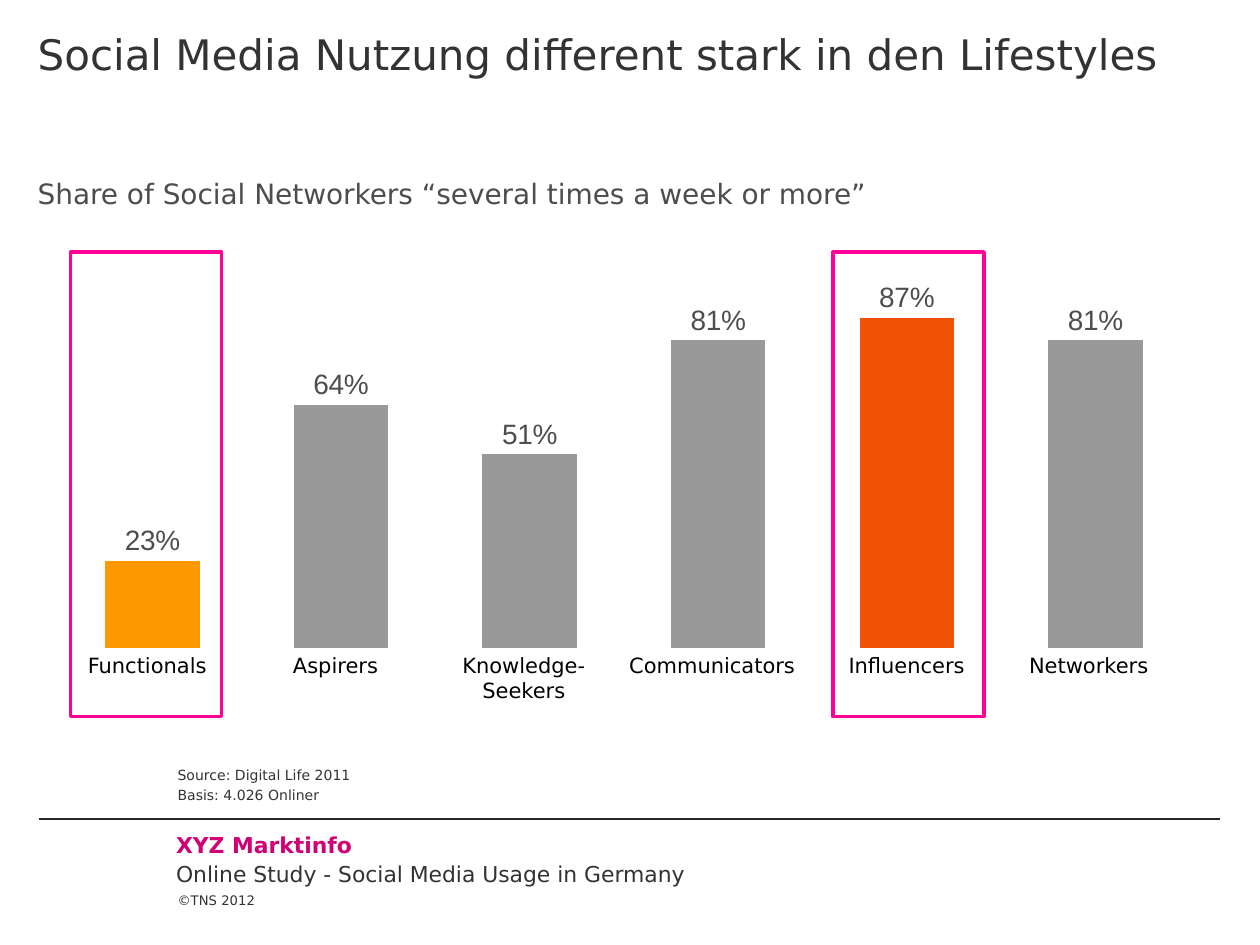
"""Builds a slide on social media usage by lifestyle group."""
import pptx
import pptx.chart.data
import pptx.dml.color
import pptx.enum.chart
import pptx.enum.shapes
import pptx.enum.text
import pptx.oxml
import pptx.oxml.ns
import pptx.util
from pptx.util import Cm, Pt

COLORS = {
    "text": "333333", "label": "4D4D4D", "black": "000000", "rule": "262626",
    "brand": "D10074", "frame": "FF0099", "bar": "999999",
    "low": "FF9900", "high": "EF5205",
}
FONT = "DejaVu Sans"
SHARES = {
    "Functionals": 23, "Aspirers": 64, "Knowledge-Seekers": 51,
    "Communicators": 81, "Influencers": 87, "Networkers": 81,
}
LAYOUT_XML = (
    '<c:layout %s><c:manualLayout><c:layoutTarget val="inner"/>'
    '<c:xMode val="edge"/><c:yMode val="edge"/><c:x val="0.026"/><c:y val="0.172"/>'
    '<c:w val="0.97"/><c:h val="0.8"/></c:manualLayout></c:layout>'
    % pptx.oxml.ns.nsdecls("c")
)


def rgb(name):
    return pptx.dml.color.RGBColor.from_string(COLORS[name])


def lengths(values):
    return [Cm(v) for v in values]


class SlideBuilder:
    def __init__(self, prs):
        self.slide = prs.slides.add_slide(prs.slide_layouts[5])
        self.shapes = self.slide.shapes

    def run(self, p, text, size, color, bold=False):
        r = p.add_run()
        r.text = text
        r.font.name = FONT
        r.font.size = Pt(size)
        r.font.bold = bold
        r.font.color.rgb = rgb(color)

    def fill_text(self, tf, lines, size, color, insets, bottom=False, bold=False):
        anchor = pptx.enum.text.MSO_ANCHOR
        tf.word_wrap = True
        tf.auto_size = pptx.enum.text.MSO_AUTO_SIZE.NONE
        tf.vertical_anchor = anchor.BOTTOM if bottom else anchor.TOP
        tf.margin_left, tf.margin_top, tf.margin_right, tf.margin_bottom = lengths(insets)
        for i, line in enumerate(lines):
            p = tf.add_paragraph() if i else tf.paragraphs[0]
            p.alignment = pptx.enum.text.PP_ALIGN.LEFT
            if i:
                p.space_before = Pt(0.2 * size)
            self.run(p, line, size, color, bold)

    def title(self, text, box):
        sp = self.shapes.title
        sp.left, sp.top, sp.width, sp.height = lengths(box)
        self.fill_text(sp.text_frame, [text], 24, "text", (0.76, 0.58, 0.76, 0))

    def text(self, lines, box, size, color, insets, **style):
        sp = self.shapes.add_textbox(*lengths(box))
        self.fill_text(sp.text_frame, lines, size, color, insets, **style)

    def rule(self, x1, x2, y):
        sp = self.shapes.add_connector(
            pptx.enum.shapes.MSO_CONNECTOR.STRAIGHT, *lengths((x1, y, x2, y)))
        sp.line.color.rgb = rgb("rule")
        sp.line.width = Pt(0.75)
        sp._element.spPr.append(pptx.oxml.parse_xml(
            "<a:effectLst %s/>" % pptx.oxml.ns.nsdecls("a")))

    def frame(self, box):
        sp = self.shapes.add_shape(pptx.enum.shapes.MSO_SHAPE.RECTANGLE, *lengths(box))
        sp.shadow.inherit = False
        sp.fill.background()
        sp.line.color.rgb = rgb("frame")
        sp.line.width = Pt(2)

    def chart(self, values, highlights, box):
        data = pptx.chart.data.CategoryChartData()
        data.categories = [str(i + 1) for i in range(len(values))]
        data.add_series("Series 1", values)
        chart = self.shapes.add_chart(
            pptx.enum.chart.XL_CHART_TYPE.COLUMN_CLUSTERED, *lengths(box), data).chart
        chart.has_title = False
        chart.has_legend = False
        chart.font.name = "Arial"
        chart.font.size = Pt(14)
        chart.font.color.rgb = rgb("label")
        axis = chart.value_axis
        axis.minimum_scale, axis.maximum_scale, axis.major_unit = 0, 100, 20
        axis.has_major_gridlines = False
        axis.visible = False
        chart.category_axis.visible = False

        plot = chart.plots[0]
        plot.gap_width = 100
        plot.vary_by_categories = False
        series = plot.series[0]
        series.format.fill.solid()
        series.format.fill.fore_color.rgb = rgb("bar")
        for i, color in highlights.items():
            fill = series.points[i].format.fill
            fill.solid()
            fill.fore_color.rgb = rgb(color)
        labels = series.data_labels
        labels.show_value = True
        labels.position = pptx.enum.chart.XL_LABEL_POSITION.OUTSIDE_END
        labels.number_format = '0"%"'
        labels.number_format_is_linked = False
        labels.font.name = "Arial"
        labels.font.size = Pt(16)
        labels.font.color.rgb = rgb("label")

        area = chart._chartSpace.chart.plotArea
        for old in area.findall(pptx.oxml.ns.qn("c:layout")):
            area.remove(old)
        area.insert(0, pptx.oxml.parse_xml(LAYOUT_XML))

    def table(self, names, box, indents):
        table = self.shapes.add_table(1, len(names), *lengths(box)).table
        table.first_row = False
        table.horz_banding = False
        for i, name in enumerate(names):
            table.columns[i].width = Cm(box[2] / len(names))
            cell = table.cell(0, i)
            cell.fill.background()
            cell.margin_left = Cm(indents.get(name, 0.03))
            cell.margin_top = cell.margin_right = Cm(0.03)
            cell.margin_bottom = 0
            p = cell.text_frame.paragraphs[0]
            p.alignment = pptx.enum.text.PP_ALIGN.CENTER
            self.run(p, name, 12, "black")


def main():
    prs = pptx.Presentation()
    prs.slide_width, prs.slide_height = Cm(25.4), Cm(19.05)
    s = SlideBuilder(prs)
    footer_insets = (1.37, 0.25, 0.25, 0.13)
    s.title("Social Media Nutzung different stark in den Lifestyles", (0, 0, 25.4, 2.87))
    s.text(["©TNS 2012"], (3.58, 17.58, 2.11, 1.47), 7.5, "text",
           (0, 0, 0, 0.74), bottom=True)
    s.rule(0.79, 24.59, 16.51)
    s.text(["XYZ Marktinfo"], (2.18, 16.51, 20.98, 1.04), 12.5, "brand",
           footer_insets, bold=True)
    s.chart(list(SHARES.values()), {0: "low", 4: "high"}, (0.56, 3.76, 23.52, 9.58))
    s.table(list(SHARES), (1.07, 13.16, 22.78, 1.3), {"Influencers": 0.28})
    for left in (1.42, 16.79):
        s.frame((left, 5.08, 3.05, 9.37))
    s.text(["Source: Digital Life 2011", "Basis: 4.026 Onliner"],
           (3.58, 15.47, 21.01, 1.02), 8, "text", (0, 0, 0, 0.3), bottom=True)
    s.text(["Online Study - Social Media Usage in Germany"],
           (2.18, 17.09, 20.98, 1.04), 12.5, "text", footer_insets)
    s.text(["Share of Social Networkers “several times a week or more”"],
           (0.51, 3.43, 24.89, 10.69), 16, "label", (0.25, 0.13, 0.25, 0.13))
    prs.save("out.pptx")


if __name__ == "__main__":
    main()
